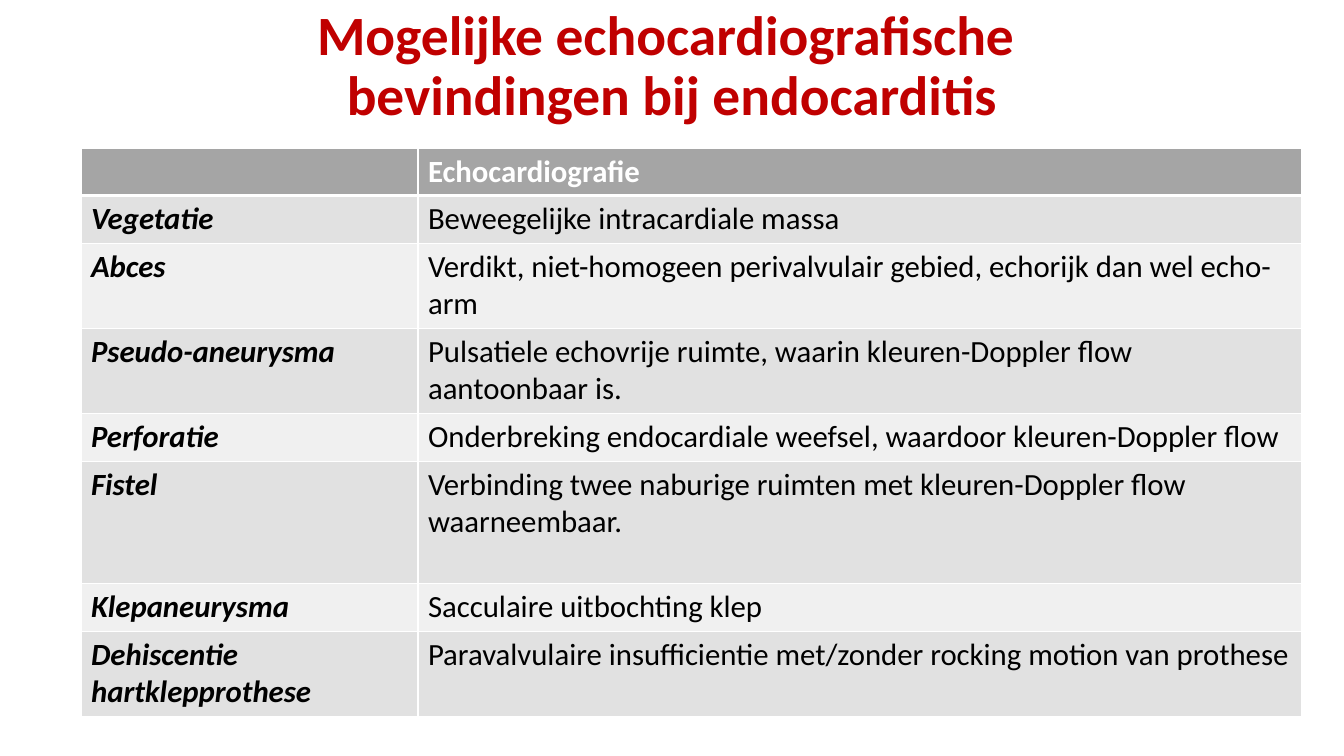
import pptx
import pptx.util
import pptx.dml.color
import pptx.enum.text
import pptx.oxml.ns
import lxml.etree
import dataclasses

SCALE = 914400 / 100.8


@dataclasses.dataclass(frozen=True)
class Theme:
    """Colours, font and type sizes of the slide."""
    font: str = "Calibri"
    title: str = "C00000"
    text: str = "000000"
    white: str = "FFFFFF"
    header: str = "A5A5A5"
    bands: tuple = ("E1E1E1", "F0F0F0")
    title_size: float = 39.6
    table_size: float = 22
    rule: float = 1
    header_rule: float = 3


THEME = Theme()
TITLE = "Mogelijke echocardiografische \vbevindingen bij endocarditis"
COLUMNS = (337, 884)
FINDINGS = (
    ("", "Echocardiografie", 47),
    ("Vegetatie", "Beweegelijke intracardiale massa", 47),
    ("Abces", "Verdikt, niet-homogeen perivalvulair gebied, echorijk dan wel echo-arm", 85),
    ("Pseudo-aneurysma", "Pulsatiele echovrije ruimte, waarin kleuren-Doppler flow aantoonbaar is.", 85),
    ("Perforatie", "Onderbreking endocardiale weefsel, waardoor kleuren-Doppler flow", 48),
    ("Fistel", "Verbinding twee naburige ruimten met kleuren-Doppler flow waarneembaar.", 122),
    ("Klepaneurysma", "Sacculaire uitbochting klep", 48),
    ("Dehiscentie hartklepprothese", "Paravalvulaire insufficientie met/zonder rocking motion van prothese", 84),
)


def px(n):
    """Turn px into EMU."""
    return pptx.util.Emu(round(n * SCALE))


def rgb(color):
    """Turn a hex string into a colour."""
    return pptx.dml.color.RGBColor.from_string(color)


def apply(target, values):
    """Set the attributes of target from a dict."""
    for name, value in values.items():
        setattr(target, name, value)


def style_font(font, color, **values):
    """Format a font in the theme typeface."""
    apply(font, {"name": THEME.font, **values})
    font.color.rgb = rgb(color)


def add_borders(cell, top, bottom):
    """Draw white cell borders with the given top and bottom widths."""
    tc_pr = cell._tc.get_or_add_tcPr()
    widths = {"a:lnL": THEME.rule, "a:lnR": THEME.rule, "a:lnT": top, "a:lnB": bottom}
    for i, (tag, width) in enumerate(widths.items()):
        ln = lxml.etree.Element(pptx.oxml.ns.qn(tag), w=str(pptx.util.Pt(width)))
        fill = lxml.etree.SubElement(ln, pptx.oxml.ns.qn("a:solidFill"))
        lxml.etree.SubElement(fill, pptx.oxml.ns.qn("a:srgbClr"), val=THEME.white)
        tc_pr.insert(i, ln)


def add_title(slide, left, top, width, height):
    """Place and format the title placeholder in its box."""
    sp = slide.shapes.title
    apply(sp, {"left": px(left), "top": px(top), "width": px(width), "height": px(height)})
    tf = sp.text_frame
    tf.text = TITLE
    apply(tf, {"word_wrap": True,
               "auto_size": pptx.enum.text.MSO_AUTO_SIZE.NONE,
               "vertical_anchor": pptx.enum.text.MSO_ANCHOR.MIDDLE})
    p = tf.paragraphs[0]
    apply(p, {"alignment": pptx.enum.text.PP_ALIGN.CENTER, "line_spacing": 0.9})
    for r in p.runs:
        style_font(r.font, THEME.title, size=pptx.util.Pt(THEME.title_size), bold=True)


def fill_cell(cell, text, row, col):
    """Write and format one cell according to its row and column."""
    header = row == 0
    cell.fill.solid()
    cell.fill.fore_color.rgb = rgb(THEME.header if header else THEME.bands[(row - 1) % 2])
    add_borders(cell,
                THEME.header_rule if row == 1 else THEME.rule,
                THEME.header_rule if header else THEME.rule)
    if text:
        cell.text = text
        r = cell.text_frame.paragraphs[0].runs[0]
        style_font(r.font, THEME.white if header else THEME.text,
                   size=pptx.util.Pt(THEME.table_size),
                   bold=header or col == 0, italic=not header and col == 0)


def add_findings(slide, left, top):
    """Add the table of findings with its top left corner at the given point."""
    heights = [height for *_, height in FINDINGS]
    table = slide.shapes.add_table(len(FINDINGS), len(COLUMNS), px(left), px(top),
                                   px(sum(COLUMNS)), px(sum(heights))).table
    for column, width in zip(table.columns, COLUMNS):
        column.width = px(width)
    for row, (*texts, height) in enumerate(FINDINGS):
        table.rows[row].height = px(height)
        for col, text in enumerate(texts):
            fill_cell(table.cell(row, col), text, row, col)


def main():
    """Build the slide and save it."""
    prs = pptx.Presentation()
    apply(prs, {"slide_width": px(1344), "slide_height": px(756)})
    slide = prs.slides.add_slide(prs.slide_layouts[5])
    add_title(slide, 0, 20, 1344, 95)
    add_findings(slide, 81, 148)
    prs.save("out.pptx")


if __name__ == "__main__":
    main()
